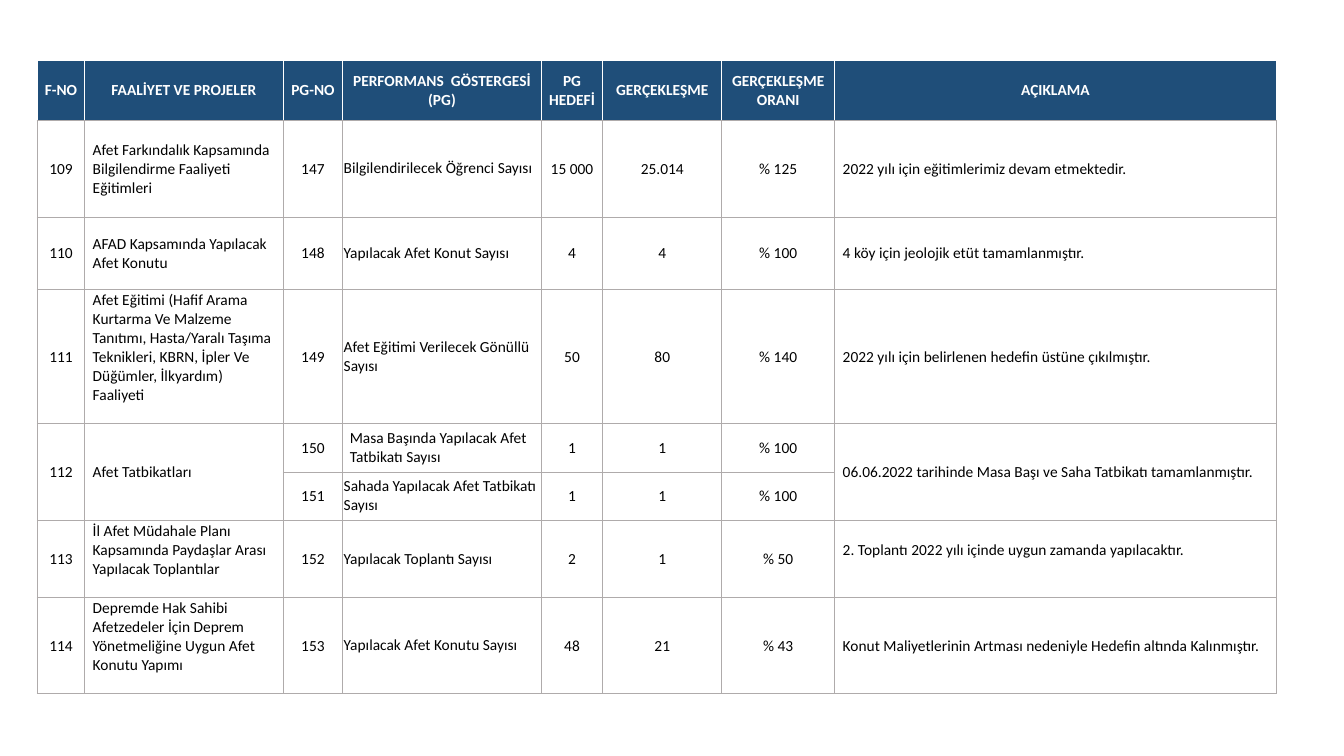
from lxml.etree import SubElement
from pptx import Presentation
from pptx.dml.color import RGBColor
from pptx.enum.text import MSO_ANCHOR, PP_ALIGN
from pptx.oxml.ns import qn
from pptx.util import Inches, Pt

NAVY = RGBColor(0x1F, 0x4E, 0x79)
WHITE = RGBColor(0xFF, 0xFF, 0xFF)
BLACK = RGBColor(0, 0, 0)
GRAY = RGBColor(0xAF, 0xAB, 0xAB)

WIDTHS = [0.47, 1.97, 0.59, 1.97, 0.61, 1.18, 1.12, 4.38]
HEIGHTS = [0.59, 0.96, 0.72, 1.33, 0.48, 0.48, 0.76, 0.95]
HEAD = ["F-NO", "FAALİYET VE PROJELER", "PG-NO", "PERFORMANS  GÖSTERGESİ (PG)",
        "PG\vHEDEFİ", "GERÇEKLEŞME", "GERÇEKLEŞME ORANI", "AÇIKLAMA"]
BODY = [
    ["109", "Afet Farkındalık Kapsamında Bilgilendirme Faaliyeti Eğitimleri", "147",
     "Bilgilendirilecek Öğrenci Sayısı", "15 000", "25.014", "% 125",
     "2022 yılı için eğitimlerimiz devam etmektedir."],
    ["110", "AFAD Kapsamında Yapılacak Afet Konutu", "148",
     "Yapılacak Afet Konut Sayısı", "4", "4", "% 100",
     "4 köy için jeolojik etüt tamamlanmıştır."],
    ["111", "Afet Eğitimi (Hafif Arama Kurtarma Ve Malzeme Tanıtımı, Hasta/Yaralı "
     "Taşıma Teknikleri, KBRN, İpler Ve Düğümler, İlkyardım) Faaliyeti", "149",
     "Afet Eğitimi Verilecek Gönüllü Sayısı", "50", "80", "% 140",
     "2022 yılı için belirlenen hedefin üstüne çıkılmıştır."],
    ["112", "Afet Tatbikatları", "150",
     "Masa Başında Yapılacak Afet Tatbikatı Sayısı", "1", "1", "% 100",
     "06.06.2022 tarihinde Masa Başı ve Saha Tatbikatı tamamlanmıştır."],
    ["", "", "151", "Sahada Yapılacak Afet Tatbikatı Sayısı", "1", "1", "% 100", ""],
    ["113", "İl Afet Müdahale Planı Kapsamında Paydaşlar Arası Yapılacak Toplantılar",
     "152", "Yapılacak Toplantı Sayısı", "2", "1", "% 50",
     "2. Toplantı 2022 yılı içinde uygun zamanda yapılacaktır."],
    ["114", "Depremde Hak Sahibi Afetzedeler İçin Deprem Yönetmeliğine Uygun Afet "
     "Konutu Yapımı", "153", "Yapılacak Afet Konutu Sayısı", "48", "21", "% 43",
     "Konut Maliyetlerinin Artması nedeniyle Hedefin altında Kalınmıştır."],
]
TIGHT = (0.01, 0.01, 0.01, 0)
WIDE = (0.08, 0.01, 0.08, 0)
GOAL = (0.01, 0.05, 0.01, 0.05)
INSETS = [TIGHT, WIDE, WIDE, GOAL, WIDE, WIDE, WIDE, WIDE]
RAISED = (0.08, 0.01, 0.08, 0.19)
SPECIAL = {(3, 1): RAISED, (6, 1): RAISED, (7, 1): RAISED, (6, 7): RAISED,
           (4, 3): (0.07, 0.05, 0.07, 0.05)}
LEFT = {1, 3, 7}
SIDES = ["margin_left", "margin_top", "margin_right", "margin_bottom"]
FONT = {"name": "Calibri", "size": Pt(11)}
TITLE = {**FONT, "bold": True}
PLAIN = {**FONT, "bold": False}


def apply(item, values):
    """Set each attribute of the item from a dict."""
    for name, value in values.items():
        setattr(item, name, value)


def edge(cell, side, color, points):
    """Draw one border of a cell."""
    line = SubElement(cell._tc.get_or_add_tcPr(), qn(f"a:ln{side}"), w=str(Pt(points)))
    fill = SubElement(line, qn("a:solidFill"))
    SubElement(fill, qn("a:srgbClr"), val=str(color))


def frame(cell, row):
    """Draw the four borders of a cell."""
    for side in "LRTB":
        if row == 0 and side != "B":
            edge(cell, side, WHITE, 1)
        else:
            edge(cell, side, GRAY, 0.5 if side in "LR" else 0.25)


def write(cell, text, insets, align, font, color):
    """Put formatted text into a cell."""
    cell.text = text
    cell.vertical_anchor = MSO_ANCHOR.MIDDLE
    apply(cell, {side: Inches(gap) for side, gap in zip(SIDES, insets)})
    for para in cell.text_frame.paragraphs:
        para.alignment = align
        apply(para.font, font)
        para.font.color.rgb = color
        for run in para.runs:
            apply(run.font, font)
            run.font.color.rgb = color


def dress(cell, row, col, text):
    """Style one cell as heading or body."""
    frame(cell, row)
    if row == 0:
        cell.fill.solid()
        cell.fill.fore_color.rgb = NAVY
        write(cell, text, TIGHT, PP_ALIGN.CENTER, TITLE, WHITE)
    else:
        cell.fill.background()
        align = PP_ALIGN.LEFT if col in LEFT else PP_ALIGN.CENTER
        write(cell, text, SPECIAL.get((row, col), INSETS[col]), align, PLAIN, BLACK)


def grid(slide):
    """Add the performance table."""
    rows = [HEAD, *BODY]
    table = slide.shapes.add_table(
        len(rows), len(HEAD), Inches(0.37), Inches(0.6),
        Inches(sum(WIDTHS)), Inches(sum(HEIGHTS))).table
    apply(table, {"first_row": False, "horz_banding": False})
    for col, width in zip(table.columns, WIDTHS):
        col.width = Inches(width)
    for row, height in zip(table.rows, HEIGHTS):
        row.height = Inches(height)
    for r, texts in enumerate(rows):
        for c, text in enumerate(texts):
            dress(table.cell(r, c), r, c, text)
    for c in (0, 1, 7):
        table.cell(4, c).merge(table.cell(5, c))


def main():
    """Build and save the slide."""
    deck = Presentation()
    apply(deck, {"slide_width": Inches(13.33), "slide_height": Inches(7.5)})
    grid(deck.slides.add_slide(deck.slide_layouts[6]))
    deck.save("out.pptx")


if __name__ == "__main__":
    main()
